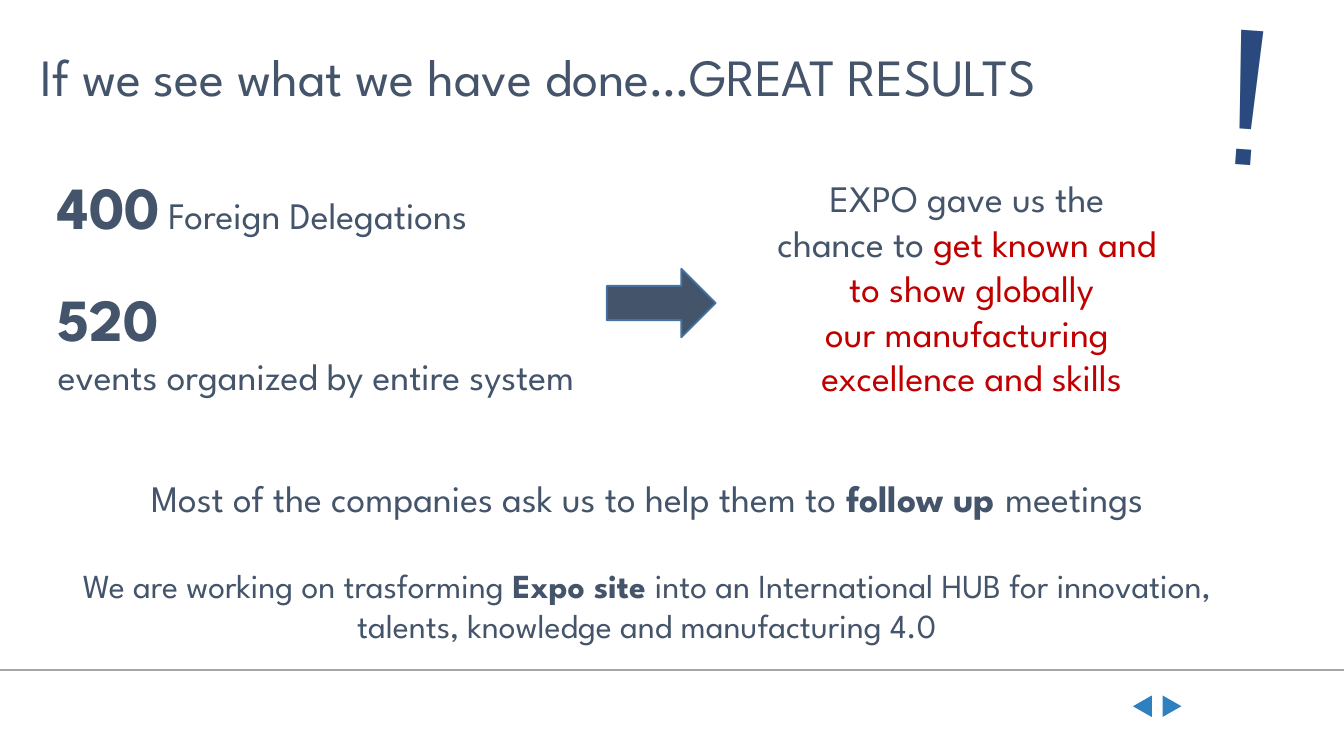
from lxml.etree import SubElement
from pptx import Presentation
from pptx.dml.color import RGBColor
from pptx.enum.shapes import MSO_CONNECTOR, MSO_SHAPE
from pptx.enum.text import MSO_ANCHOR, MSO_AUTO_SIZE, PP_ALIGN
from pptx.oxml.ns import qn
from pptx.util import Pt

PX = 4572
WIDTH, HEIGHT = 2000, 1125
SLATE, NAVY, BLUE, RED, GREY = "44546A", "2A497E", "2E80BF", "C00000", "A6A6A6"
SPARTAN = "League Spartan"


def rgb(value):
    """Turn a hex string into a colour."""
    return RGBColor.from_string(value)


def emu(*lengths):
    """Scale px lengths to EMU."""
    return [n * PX for n in lengths]


def set_attrs(obj, values):
    """Set each attribute named in a dict."""
    for name, value in values.items():
        setattr(obj, name, value)


def run(text, size=20, color=SLATE, bold=False, name=SPARTAN):
    """Describe one run of text."""
    return text, color, {"size": Pt(size), "bold": bold, "name": name}


def place(sp, box):
    """Move a shape to its box."""
    set_attrs(sp, dict(zip(("left", "top", "width", "height"), emu(*box))))


def write(sp, paragraphs, align=PP_ALIGN.LEFT, anchor=MSO_ANCHOR.TOP):
    """Fill a shape with (space before, runs) paragraphs."""
    tf = sp.text_frame
    set_attrs(tf, {"word_wrap": True, "auto_size": MSO_AUTO_SIZE.NONE,
                   "vertical_anchor": anchor})
    for i, (before, runs) in enumerate(paragraphs):
        p = tf.add_paragraph() if i else tf.paragraphs[0]
        set_attrs(p, {"alignment": align, "space_before": Pt(before)})
        for text, color, font in runs:
            r = p.add_run()
            r.text = text
            set_attrs(r.font, font)
            r.font.color.rgb = rgb(color)


def add_text(s, box, paragraphs, align=PP_ALIGN.CENTER):
    """Add a text box and return it."""
    sp = s.shapes.add_textbox(*emu(*box))
    write(sp, paragraphs, align)
    return sp


def add_filled(s, kind, box, fill, line=None, rotation=0):
    """Add a filled preset shape."""
    sp = s.shapes.add_shape(kind, *emu(*box))
    sp.shadow.inherit = False
    sp.rotation = rotation
    sp.fill.solid()
    sp.fill.fore_color.rgb = rgb(fill)
    if line:
        sp.line.color.rgb = rgb(line)
        sp.line.width = Pt(1)
    else:
        sp.line.fill.background()


def add_header(s, box):
    """Place the title and the tilted exclamation mark."""
    x, y, w, h = box
    title = s.shapes.title
    place(title, box)
    set_attrs(title.text_frame, dict.fromkeys(
        ("margin_left", "margin_top", "margin_right", "margin_bottom"), 0))
    write(title, [(0, [run("If we see what we have done…GREAT RESULTS", 28)])],
          anchor=MSO_ANCHOR.MIDDLE)
    mark = add_text(s, (x + 1746, y - 96, 142, 344),
                    [(0, [run("!", 96, NAVY, name="Cabin")])], PP_ALIGN.LEFT)
    mark.rotation = 4.1


def add_results(s, box):
    """Place the figures, the arrow and the outcome."""
    x, y, w, h = box
    body = s.placeholders[1]
    place(body, (x, y, 930, h))
    write(body, [
        (0, [run("400", 32, bold=True), run(" ", 18, NAVY),
             run("Foreign Delegations")]),
        (21.5, [run("520", 32, bold=True), run(" ", 18, NAVY)]),
        (0, [run("events organized by entire system")]),
    ])
    for p in body.text_frame.paragraphs:
        pPr = p._p.get_or_add_pPr()
        pPr.set("marL", "0")
        pPr.set("indent", "0")
        SubElement(pPr, qn("a:buNone"))
    outcome = [
        [run("EXPO gave us the ")],
        [run("chance to "), run("get known and ", color=RED)],
        [run("to show globally", color=RED)],
        [run("our manufacturing ", color=RED)],
        [run("excellence and skills", color=RED)],
    ]
    add_text(s, (x + w - 1000, y + 8, 1000, 356),
             [(0, runs) for runs in outcome])
    add_filled(s, MSO_SHAPE.RIGHT_ARROW, (x + 837, y + 157, 162, 102),
               SLATE, "43739E")


def add_next_steps(s, box):
    """Place the closing statements."""
    add_text(s, box, [
        (0, [run("Most of the companies ask us to help them to "),
             run("follow up ", bold=True), run("meetings")]),
        (24, [run("We are working on trasforming ", 18),
              run("Expo site ", 18, bold=True),
              run("into an International HUB for innovation, talents, "
                  "knowledge and manufacturing 4.0", 18)]),
    ])


def add_footer(s, box):
    """Place the rule and the two navigation triangles."""
    x, y, w, h = box
    rule = s.shapes.add_connector(MSO_CONNECTOR.STRAIGHT, *emu(x, y, x + w, y))
    rule.line.color.rgb = rgb(GREY)
    rule.line.width = Pt(0.75)
    SubElement(rule._element.spPr, qn("a:effectLst"))
    for i, rotation in enumerate((270, 90)):
        add_filled(s, MSO_SHAPE.ISOSCELES_TRIANGLE,
                   (x + 1684 + 44 * i, y + 40, 32, 28), BLUE,
                   rotation=rotation)


def main():
    """Build and save the slide."""
    prs = Presentation()
    prs.slide_width, prs.slide_height = emu(WIDTH, HEIGHT)
    s = prs.slides.add_slide(prs.slide_layouts[1])
    add_footer(s, (0, 997, WIDTH, 128))
    add_header(s, (60, 66, 1936, 94))
    add_results(s, (66, 243, 1880, 438))
    add_next_steps(s, (66, 697, 1794, 410))
    prs.save("out.pptx")


if __name__ == "__main__":
    main()
